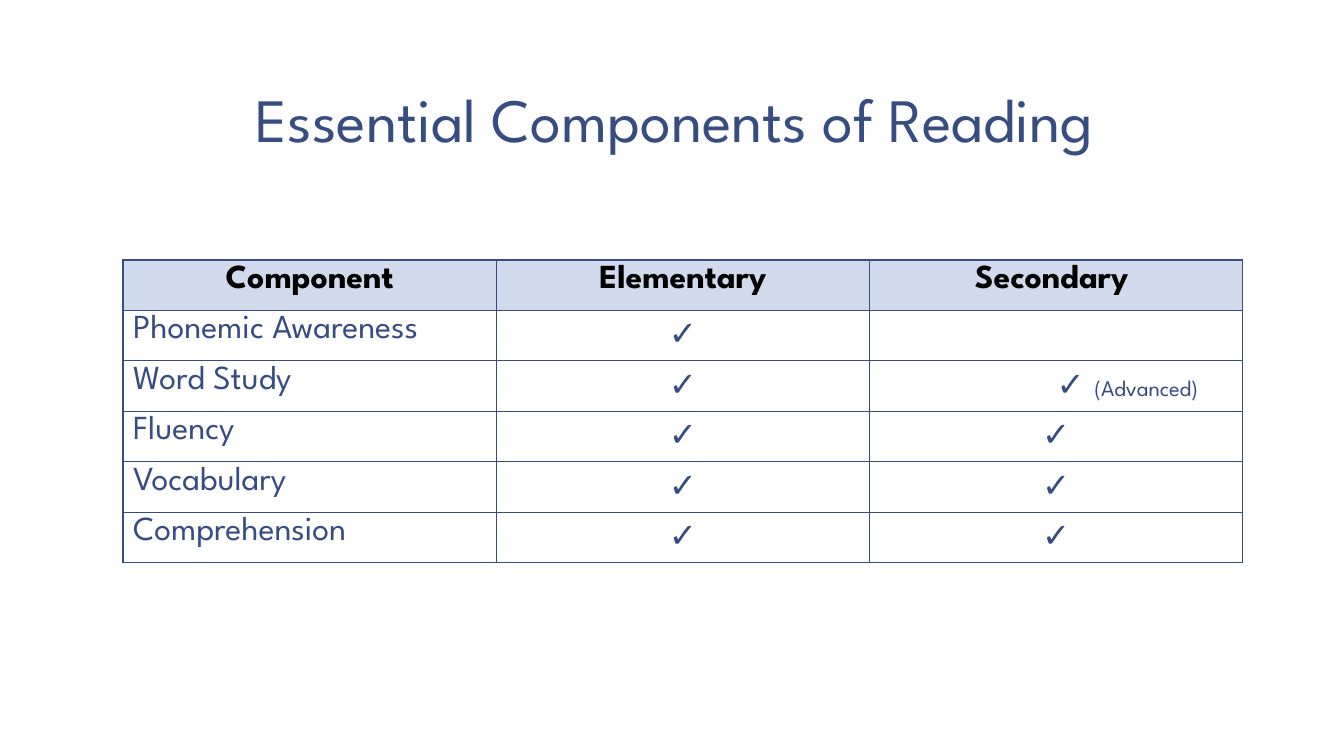
from pptx import Presentation, util as u
from pptx.dml.color import RGBColor
from pptx.enum import text
from pptx.oxml import parse_xml
from pptx.oxml.ns import nsdecls

TITLE = "Essential Components of Reading "
HEADS = ["Component", "Elementary", "Secondary "]
ROWS = [
    ("Phonemic Awareness", "✓", ""),
    ("Word Study", "✓", "✓ |(Advanced)"),
    ("Fluency", "✓", "✓"),
    ("Vocabulary", "✓", "✓"),
    ("Comprehension", "✓", "✓"),
]
THEME = {
    "ink": "374C81", "head": "D1D9EC", "black": "000000",
    "font": "League Spartan", "mark": "Arial",
    "title": 44, "body": 24, "note": 16, "line": 1,
}
LEFT, WIDTH = 3.1, 28.22
TOP, HEAD_H, ROW_H = 6.55, 1.03, 1.2
NOTE_IN = 3.85


def add_run(par, words, size, ink="ink", font="font", bold=False):
    run = par.add_run()
    run.text = words
    run.font.size = u.Pt(THEME[size])
    run.font.name = THEME[font]
    run.font.bold = bold
    run.font.color.rgb = RGBColor.from_string(THEME[ink])


def add_edges(cell):
    props = cell._tc.get_or_add_tcPr()
    for side in "LRTB":
        props.append(parse_xml(
            f'<a:ln{side} {nsdecls("a")} w="{u.Pt(THEME["line"])}"><a:solidFill>'
            f'<a:srgbClr val="{THEME["ink"]}"/></a:solidFill></a:ln{side}>'))


def add_title(slide):
    box = slide.shapes.add_textbox(u.Cm(LEFT), u.Cm(0.2), u.Cm(WIDTH), u.Cm(3.89))
    frame = box.text_frame
    frame.word_wrap = True
    frame.vertical_anchor = text.MSO_ANCHOR.BOTTOM
    frame.margin_left = frame.margin_right = u.Cm(0.33)
    frame.margin_top = frame.margin_bottom = u.Cm(0.18)
    par = frame.paragraphs[0]
    par.alignment = text.PP_ALIGN.CENTER
    par.line_spacing = 0.85
    add_run(par, TITLE, "title")


def fill_cell(cell, words, row, col):
    add_edges(cell)
    par = cell.text_frame.paragraphs[0]
    if row == 0 or col > 0:
        par.alignment = text.PP_ALIGN.CENTER
    if row == 0:
        cell.fill.solid()
        cell.fill.fore_color.rgb = RGBColor.from_string(THEME["head"])
        add_run(par, words, "body", "black", bold=True)
        return
    cell.fill.background()
    main, _, note = words.partition("|")
    if main:
        add_run(par, main, "body", font="mark" if col else "font")
    if note:
        cell.margin_left = u.Cm(NOTE_IN)
        add_run(par, note, "note")


def add_grid(slide):
    data = [HEADS] + ROWS
    high = HEAD_H + ROW_H * len(ROWS)
    grid = slide.shapes.add_table(len(data), len(HEADS), u.Cm(LEFT), u.Cm(TOP),
                                  u.Cm(WIDTH), u.Cm(high)).table
    grid.first_row = grid.horz_banding = False
    for row, line in enumerate(data):
        grid.rows[row].height = u.Cm(ROW_H if row else HEAD_H)
        for col, words in enumerate(line):
            fill_cell(grid.cell(row, col), words, row, col)


def main():
    deck = Presentation()
    deck.slide_width, deck.slide_height = u.Cm(33.87), u.Cm(19.05)
    slide = deck.slides.add_slide(deck.slide_layouts[6])
    add_title(slide)
    add_grid(slide)
    deck.save("out.pptx")


if __name__ == "__main__":
    main()
